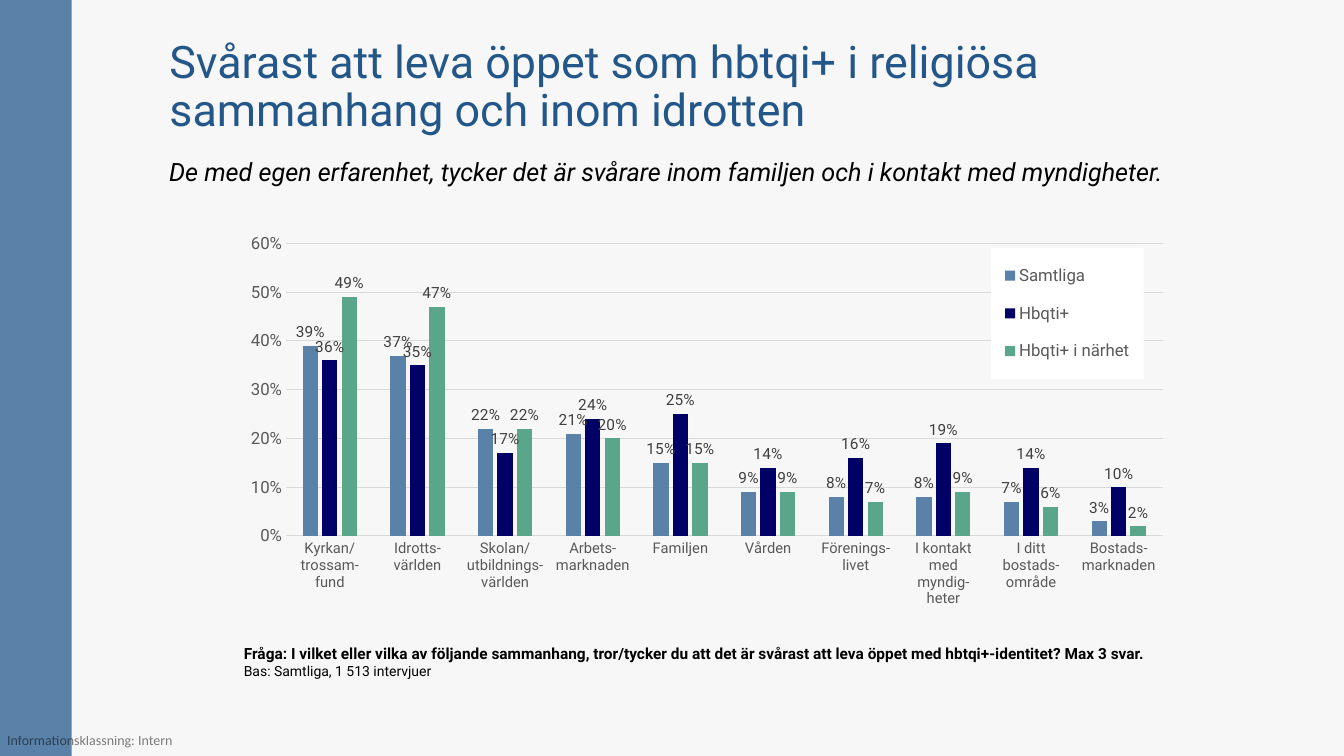
from lxml import etree
from pptx import Presentation
from pptx.chart.data import CategoryChartData
from pptx.dml.color import RGBColor
from pptx.enum.chart import XL_CHART_TYPE, XL_LABEL_POSITION, XL_LEGEND_POSITION, XL_TICK_MARK
from pptx.enum.shapes import MSO_SHAPE
from pptx.enum.text import MSO_ANCHOR, PP_ALIGN
from pptx.oxml import parse_xml
from pptx.oxml.ns import nsdecls, qn
from pptx.util import Inches, Pt

COLUMNS = XL_CHART_TYPE.COLUMN_CLUSTERED
OUTSIDE = XL_LABEL_POSITION.OUTSIDE_END
RIGHT = XL_LEGEND_POSITION.RIGHT
NO_TICK = XL_TICK_MARK.NONE
RECTANGLE = MSO_SHAPE.RECTANGLE
TOP, MIDDLE = MSO_ANCHOR.TOP, MSO_ANCHOR.MIDDLE
LEFT = PP_ALIGN.LEFT

# Content
FONT = "Roboto"
TITLE = "Svårast att leva öppet som hbtqi+ i religiösa sammanhang och inom idrotten"
SUBTITLE = ("De med egen erfarenhet, tycker det är svårare inom familjen "
            "och i kontakt med myndigheter.")
QUESTION = ("Fråga: I vilket eller vilka av följande sammanhang, tror/tycker du att det "
            "är svårast att leva öppet med hbtqi+-identitet? Max 3 svar.")
BASE = "Bas: Samtliga, 1 513 intervjuer"
CLASSIFICATION = "Informationsklassning: Intern"
CONTEXTS = [
    "Kyrkan/\ntrossam-\nfund", "Idrotts-\nvärlden", "Skolan/\nutbildnings-\nvärlden",
    "Arbets-\nmarknaden", "Familjen", "Vården", "Förenings-\nlivet",
    "I kontakt\nmed myndig-\nheter", "I ditt\nbostads-\nområde", "Bostads-\nmarknaden",
]
GROUPS = [  # name, colour, shares
    ("Samtliga", "5A81A7", [.39, .37, .22, .21, .15, .09, .08, .08, .07, .03]),
    ("Hbqti+", "000066", [.36, .35, .17, .24, .25, .14, .16, .19, .14, .10]),
    ("Hbqti+ i närhet", "59A68B", [.49, .47, .22, .20, .15, .09, .07, .09, .06, .02]),
]
# Shares of the chart's size: left, top, width, height
PLOT_AREA = (0.06, 0.05, 0.92, 0.67)
LEGEND_AREA = (0.8, 0.06, 0.16, 0.3)


def color(hex_code):
    return RGBColor.from_string(hex_code)


def style(font, size, hex_code, name=FONT, bold=False, italic=False):
    font.name, font.size, font.bold, font.italic = name, Pt(size), bold, italic
    font.color.rgb = color(hex_code)


def add_span(para, text, *args, **kwargs):
    span = para.add_run()
    span.text = text
    style(span.font, *args, **kwargs)
    return span


def prepare(box, anchor=TOP):
    frame = box.text_frame
    frame.word_wrap = True
    frame.vertical_anchor = anchor
    para = frame.paragraphs[0]
    para.alignment = LEFT
    return para


def add_text_box(page, left, top, width, height, anchor=TOP):
    return page.shapes.add_textbox(Inches(left), Inches(top), Inches(width), Inches(height)), anchor


def set_layout(parent, index, area, inner=False):
    for old in parent.findall(qn("c:layout")):
        parent.remove(old)
    layout = parse_xml(f"<c:layout {nsdecls('c')}><c:manualLayout/></c:layout>")
    settings = [("layoutTarget", "inner")] if inner else []
    settings += [("xMode", "edge"), ("yMode", "edge"), *zip("xywh", area)]
    for tag, value in settings:
        etree.SubElement(layout[0], qn("c:" + tag)).set("val", str(value))
    parent.insert(index, layout)


def add_chart(page):
    data = CategoryChartData(number_format="0%")
    data.categories = CONTEXTS
    for name, _, shares in GROUPS:
        data.add_series(name, shares)
    chart = page.shapes.add_chart(
        COLUMNS, Inches(2.27), Inches(2.2), Inches(9.45), Inches(4.33), data).chart
    chart.has_title = False
    style(chart.font, 10, "000000")

    # Columns and their labels
    plot = chart.plots[0]
    plot.gap_width, plot.overlap, plot.vary_by_categories = 219, -27, False
    for series, (_, fill, _) in zip(plot.series, GROUPS):
        series.format.fill.solid()
        series.format.fill.fore_color.rgb = color(fill)
        labels = series.data_labels
        labels.show_value = True
        labels.position = OUTSIDE
        labels.number_format, labels.number_format_is_linked = "0%", False
        style(labels.font, 11, "404040")

    # Axes
    contexts, shares = chart.category_axis, chart.value_axis
    for axis, size in ((contexts, 10.5), (shares, 12)):
        axis.major_tick_mark = axis.minor_tick_mark = NO_TICK
        style(axis.tick_labels.font, size, "595959")
    shares.minimum_scale, shares.maximum_scale, shares.major_unit = 0, 0.6, 0.1
    shares.tick_labels.number_format = "0%"
    shares.tick_labels.number_format_is_linked = False
    shares.format.line.fill.background()
    for line in (contexts.format.line, shares.major_gridlines.format.line):
        line.color.rgb = color("D9D9D9")
        line.width = Pt(0.75)

    # White legend placed over the plot
    chart.has_legend = True
    legend = chart.legend
    legend.position = RIGHT
    legend.include_in_layout = False
    style(legend.font, 12, "595959")
    legend_xml = legend._element
    set_layout(legend_xml, 1, LEGEND_AREA)
    legend_xml.find(qn("c:overlay")).addnext(parse_xml(
        f"<c:spPr {nsdecls('c', 'a')}><a:solidFill>"
        '<a:srgbClr val="FFFFFF"/></a:solidFill></c:spPr>'))
    set_layout(chart._chartSpace.chart.plotArea, 0, PLOT_AREA, inner=True)


def main():
    deck = Presentation()
    deck.slide_width, deck.slide_height = Inches(13.33), Inches(7.5)
    page = deck.slides.add_slide(deck.slide_layouts[5])
    page.background.fill.solid()
    page.background.fill.fore_color.rgb = color("F7F7F7")

    # Side band
    band = page.shapes.add_shape(RECTANGLE, 0, 0, Inches(0.71), deck.slide_height)
    band.shadow.inherit = False
    band.fill.solid()
    band.fill.fore_color.rgb = color("5A81A7")
    band.line.fill.background()

    # Half-transparent classification mark
    mark, anchor = add_text_box(page, 0.07, 7.26, 1.68, 0.17)
    frame = mark.text_frame
    frame.margin_left = frame.margin_top = frame.margin_right = frame.margin_bottom = 0
    span = add_span(prepare(mark, anchor), CLASSIFICATION, 10, "000000", name="Calibri")
    tint = span._r.find(".//" + qn("a:srgbClr"))
    etree.SubElement(tint, qn("a:alpha")).set("val", "50000")

    add_chart(page)

    # Question and base
    note, anchor = add_text_box(page, 2.32, 6.34, 9.4, 0.69)
    para = prepare(note, anchor)
    add_span(para, QUESTION, 11, "000000", bold=True)
    para.add_line_break()
    add_span(para, BASE, 10, "000000")

    # Title and subtitle
    title = page.shapes.title
    title.left, title.top = Inches(1.58), Inches(0.39)
    title.width, title.height = Inches(10.84), Inches(0.96)
    para = prepare(title, MIDDLE)
    para.line_spacing = 0.9
    add_span(para, TITLE, 32, "235789")
    subtitle, anchor = add_text_box(page, 1.58, 1.5, 10.84, 0.4, MIDDLE)
    add_span(prepare(subtitle, anchor), SUBTITLE, 18, "000000", italic=True)

    deck.save("out.pptx")


if __name__ == "__main__":
    main()
